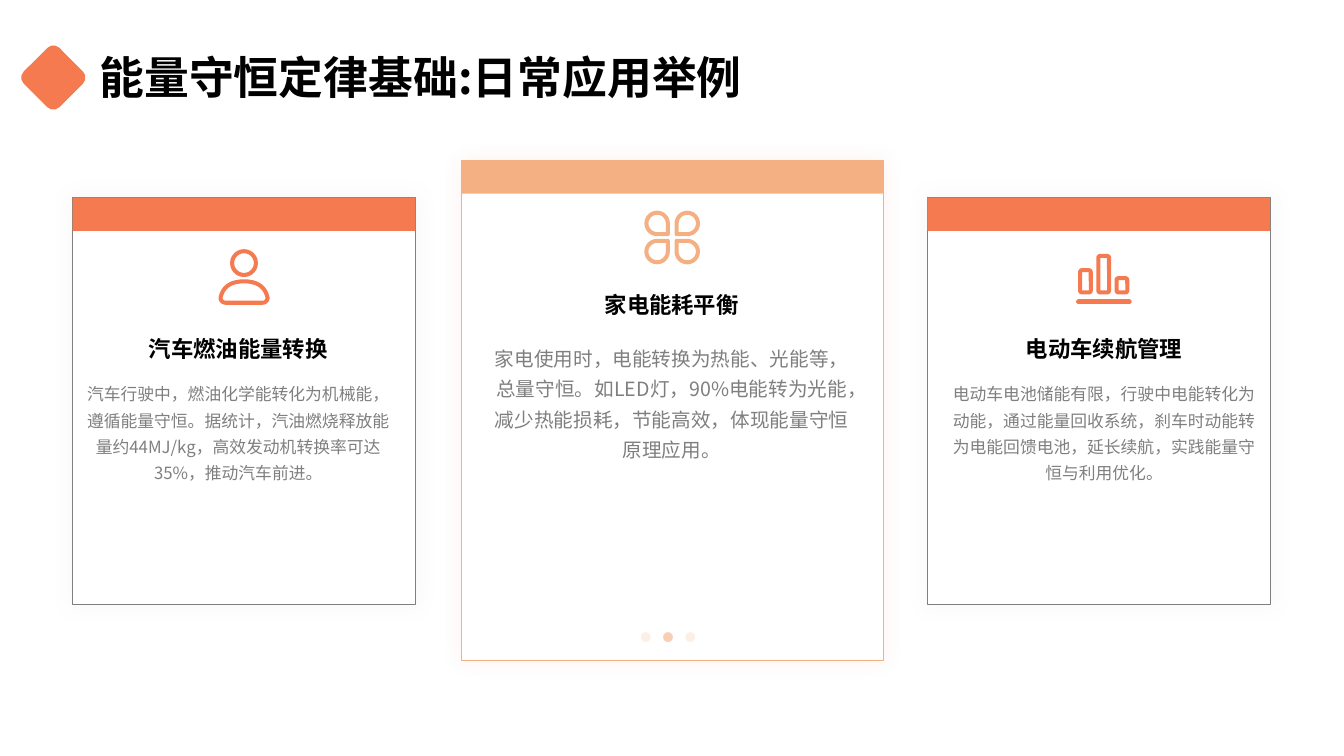
from dataclasses import dataclass

from lxml.etree import SubElement
from pptx import Presentation
from pptx.dml.color import RGBColor
from pptx.enum.shapes import MSO_SHAPE as Preset
from pptx.enum.text import MSO_ANCHOR as Anchor, PP_ALIGN as Align
from pptx.oxml.ns import qn
from pptx.util import Cm, Pt


@dataclass(frozen=True)
class Theme:
    font: str = "Noto Sans CJK SC"
    accent: str = "F57A50"
    soft: str = "F4B083"
    paper: str = "FFFFFF"
    ink: str = "000000"
    muted: str = "7F7F7F"
    side_shadow: str = "A6A6A6"
    title: int = 32
    heading: int = 16
    body_large: int = 14
    body: int = 12
    hairline: float = 0.25
    icon_stroke: float = 2.9


THEME = Theme()


def rgb(color):
    return RGBColor.from_string(color)


def style(shape, fill=None, line=None, line_width=THEME.hairline, alpha=None):
    shape.shadow.inherit = False
    if fill:
        shape.fill.solid()
        shape.fill.fore_color.rgb = rgb(fill)
        if alpha:
            color = shape.fill._xPr.find(qn("a:solidFill"))[0]
            SubElement(color, qn("a:alpha"), val=str(alpha * 1000))
    else:
        shape.fill.background()
    if line:
        shape.line.color.rgb = rgb(line)
        shape.line.width = Pt(line_width)
    else:
        shape.line.fill.background()
    return shape


def add_preset(slide, preset, left, top, width, height, **look):
    shape = slide.shapes.add_shape(preset, Cm(left), Cm(top), Cm(width), Cm(height))
    return style(shape, **look)


def add_glow(shape, color):
    """Give the shape a soft, centred shadow."""
    effects = shape._element.spPr.find(qn("a:effectLst"))
    glow = SubElement(effects, qn("a:outerShdw"), blurRad=str(Pt(15)), dist="0",
                      algn="ctr", rotWithShape="0")
    color_node = SubElement(glow, qn("a:srgbClr"), val=color)
    SubElement(color_node, qn("a:alpha"), val="10000")


def add_text(slide, text, left, top, width, height, *, size, color=THEME.ink, bold=False,
             align=Align.CENTER, anchor=Anchor.MIDDLE, margins=True,
             line_spacing=None, gap=None):
    box = slide.shapes.add_textbox(Cm(left), Cm(top), Cm(width), Cm(height))
    frame = box.text_frame
    frame.word_wrap = True
    frame.vertical_anchor = anchor
    if not margins:
        frame.margin_left = frame.margin_right = frame.margin_top = frame.margin_bottom = 0
    paragraph = frame.paragraphs[0]
    paragraph.alignment = align
    if line_spacing:
        paragraph.line_spacing = line_spacing
    if gap:
        paragraph.space_before = paragraph.space_after = Pt(gap)
    run = paragraph.add_run()
    run.text = text
    run.font.size = Pt(size)
    run.font.bold = bold
    run.font.name = THEME.font
    run.font.color.rgb = rgb(color)
    SubElement(run._r.get_or_add_rPr(), qn("a:ea"), typeface=THEME.font)


def bezier(start, first, second, end, steps=12):
    points = []
    for step in range(steps + 1):
        t = step / steps
        weights = ((1 - t) ** 3, 3 * t * (1 - t) ** 2, 3 * t * t * (1 - t), t ** 3)
        corners = (start, first, second, end)
        points.append(tuple(sum(w * c[axis] for w, c in zip(weights, corners))
                            for axis in (0, 1)))
    return points


def person_icon(slide, center, top, color):
    stroke = dict(line=color, line_width=THEME.icon_stroke)
    add_preset(slide, Preset.OVAL, center - 0.3, top + 0.05, 0.6, 0.6, **stroke)
    half = bezier((0, 0.81), (0.38, 0.81), (0.53, 0.99), (0.58, 1.18))
    half += bezier((0.58, 1.18), (0.62, 1.27), (0.55, 1.35), (0.46, 1.35))[1:]
    outline = half + [(-x, y) for x, y in reversed(half[1:])]
    points = [(Cm(center + x), Cm(top + y)) for x, y in outline]
    builder = slide.shapes.build_freeform(*points[0])
    builder.add_line_segments(points[1:], close=True)
    style(builder.convert_to_shape(), **stroke)


def petals_icon(slide, center, top, color):
    size, pitch_x, pitch_y = 0.54, 0.76, 0.71
    for column, row, rotation in ((0, 0, 90), (1, 0, 180), (0, 1, 0), (1, 1, 270)):
        petal = add_preset(slide, Preset.TEAR, center - 0.65 + column * pitch_x,
                           top + 0.05 + row * pitch_y, size, size,
                           line=color, line_width=THEME.icon_stroke)
        petal.rotation = rotation


def bars_icon(slide, center, top, color):
    bottom = 0.97
    for index, bar_top in enumerate((0.41, 0.05, 0.61)):
        add_preset(slide, Preset.ROUNDED_RECTANGLE, center - 0.6 + index * 0.46,
                   top + bar_top, 0.27, bottom - bar_top,
                   line=color, line_width=THEME.icon_stroke)
    base = add_preset(slide, Preset.ROUNDED_RECTANGLE, center - 0.7, top + 1.14, 1.4, 0.12,
                      fill=color)
    base.adjustments[0] = 0.5


def add_card(slide, box, heading, body, *, color, border, glow, icon, icon_at,
             inset, text_width, heading_top, body_top, body_height, body_size):
    """Place a card; icon_at is the shift from the card's centre line and top."""
    left, top, width, height = box
    panel = add_preset(slide, Preset.RECTANGLE, *box, fill=THEME.paper, line=border)
    add_glow(panel, glow)
    add_preset(slide, Preset.RECTANGLE, left, top, width, 0.84, fill=color)
    icon(slide, left + width / 2 + icon_at[0], top + icon_at[1], color)
    add_text(slide, heading, left + inset, top + heading_top, text_width, 1.04,
             size=THEME.heading, bold=True, margins=False)
    add_text(slide, body, left + inset, top + body_top, text_width, body_height,
             size=body_size, color=THEME.muted, anchor=Anchor.TOP, margins=False,
             line_spacing=1.3, gap=3)


def add_page_dots(slide, center, top):
    for index, alpha in enumerate((20, 60, 20)):
        add_preset(slide, Preset.OVAL, center - 0.79 + index * 0.56, top, 0.25, 0.25,
                   fill=THEME.soft, alpha=alpha)


def add_title(slide, text, left, top):
    diamond = add_preset(slide, Preset.ROUNDED_RECTANGLE, left, top + 0.53, 1.27, 1.27,
                         fill=THEME.accent)
    diamond.rotation = 45
    add_text(slide, text, left + 1.55, top, 30.71, 2.01, size=THEME.title, bold=True,
             align=Align.LEFT, line_spacing=1.2)


def main():
    presentation = Presentation()
    presentation.slide_width, presentation.slide_height = Cm(33.87), Cm(19.05)
    slide = presentation.slides.add_slide(presentation.slide_layouts[6])

    side = dict(color=THEME.accent, border=THEME.muted, glow=THEME.side_shadow,
                text_width=7.65, heading_top=3.28, body_top=4.55, body_height=5,
                body_size=THEME.body)
    add_card(slide, (23.37, 4.98, 8.64, 10.24), "电动车续航管理",
             "电动车电池储能有限，行驶中电能转化为动能，通过能量回收系统，刹车时动能转为电能"
             "回馈电池，延长续航，实践能量守恒与利用优化。",
             icon=bars_icon, icon_at=(0.13, 1.42), inset=0.63, **side)
    add_card(slide, (1.83, 4.98, 8.64, 10.24), "汽车燃油能量转换",
             "汽车行驶中，燃油化学能转化为机械能，遵循能量守恒。据统计，汽油燃烧释放能量约"
             "44MJ/kg，高效发动机转换率可达35%，推动汽车前进。",
             icon=person_icon, icon_at=(0, 1.3), inset=0.35, **side)
    add_card(slide, (11.63, 4.04, 10.62, 12.6), "家电能耗平衡",
             "家电使用时，电能转换为热能、光能等，总量守恒。如LED灯，90%电能转为光能，"
             "减少热能损耗，节能高效，体现能量守恒原理应用。",
             color=THEME.soft, border=THEME.soft, glow=THEME.accent,
             icon=petals_icon, icon_at=(0, 1.27), inset=0.66, text_width=9.28,
             heading_top=3.12, body_top=4.52, body_height=6.91, body_size=THEME.body_large)
    add_page_dots(slide, 16.94, 15.93)
    add_title(slide, "能量守恒定律基础:日常应用举例", 0.71, 0.79)
    presentation.save("out.pptx")


if __name__ == "__main__":
    main()
